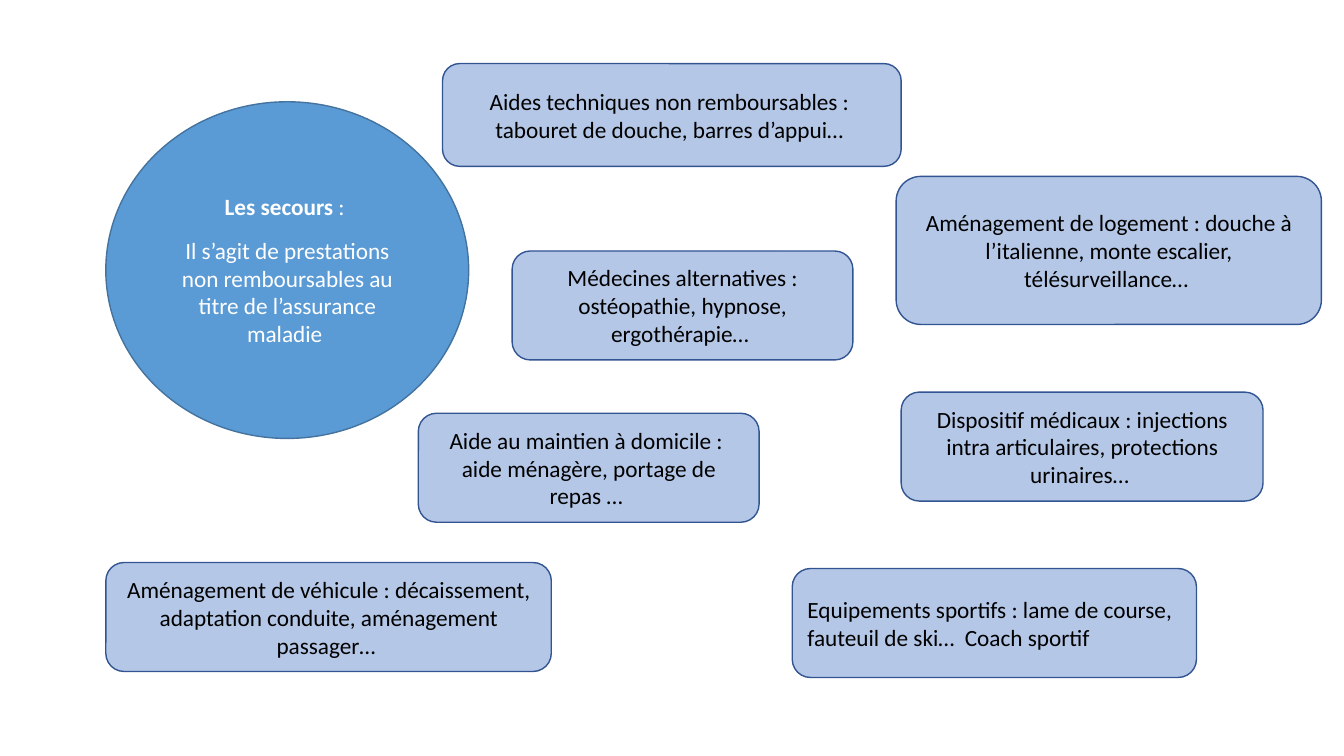
from pptx import Presentation
from pptx.dml.color import RGBColor
from pptx.enum.shapes import MSO_SHAPE
from pptx.enum.text import MSO_ANCHOR, PP_ALIGN
from pptx.util import Pt

COLORS = {
    "circle": "5B9BD5",
    "circle_line": "43739E",
    "box": "B4C7E7",
    "box_line": "325491",
    "light": "FFFFFF",
    "dark": "000000",
}
FONT = {"name": "Calibri", "size": Pt(16.6)}
BOX_H = 77.8

# Centred boxes: left, top, width, height, paragraphs
AID_BOXES = [
    (316.1, 45.4, 327.6, 73.4, ["Aides techniques non remboursables : ",
                                "tabouret de douche, barres d’appui… "]),
    (640.1, 126, 303.8, 105.8, ["Aménagement de logement : douche à l’italienne, "
                                "monte escalier, télésurveillance… "]),
    (365.8, 179.3, 243.4, BOX_H, ["Médecines alternatives : ostéopathie, hypnose, "
                                  "ergothérapie… "]),
    (643.7, 280.1, 258.5, BOX_H, ["Dispositif médicaux : injections intra articulaires, "
                                  "protections urinaires… "]),
    (75.6, 401.8, 318.2, BOX_H, ["Aménagement de véhicule : décaissement, adaptation "
                                 "conduite, aménagement passager… "]),
    (298.8, 295.2, 243.4, BOX_H, ["Aide au maintien à domicile : ",
                                  "aide ménagère, portage de repas … "]),
]
SPORT_BOX = (565.9, 406.1, 288.7, BOX_H, ["Equipements sportifs : lame de course, "
                                          "fauteuil de ski…  Coach sportif"])


def rgb(key):
    return RGBColor.from_string(COLORS[key])


def add_panel(s, kind, rect, fill, line):
    """Add a filled, outlined shape and return its text frame."""
    sp = s.shapes.add_shape(kind, *map(Pt, rect))
    sp.shadow.inherit = False
    sp.fill.solid()
    sp.fill.fore_color.rgb = rgb(fill)
    sp.line.color.rgb = rgb(line)
    sp.line.width = Pt(1)
    tf = sp.text_frame
    tf.word_wrap = True
    tf.vertical_anchor = MSO_ANCHOR.MIDDLE
    return tf


def add_run(p, text, color, bold=False):
    r = p.add_run()
    r.text = text
    for attr, value in {**FONT, "bold": bold}.items():
        setattr(r.font, attr, value)
    r.font.color.rgb = rgb(color)


def add_paragraph(tf, index, align):
    p = tf.add_paragraph() if index else tf.paragraphs[0]
    p.alignment = align
    return p


def add_box(s, left, top, width, height, lines, align=PP_ALIGN.CENTER):
    tf = add_panel(s, MSO_SHAPE.ROUNDED_RECTANGLE, (left, top, width, height),
                   "box", "box_line")
    for i, text in enumerate(lines):
        add_run(add_paragraph(tf, i, align), text, "dark")


def add_circle(s):
    tf = add_panel(s, MSO_SHAPE.OVAL, (75.6, 72.7, 259.2, 240.5),
                   "circle", "circle_line")
    p = add_paragraph(tf, 0, PP_ALIGN.CENTER)
    p.space_after = Pt(11)
    add_run(p, "Les secours ", "light", bold=True)
    add_run(p, ": ", "light")
    p = add_paragraph(tf, 1, PP_ALIGN.CENTER)
    add_run(p, "Il s’agit de prestations non remboursables au titre de "
               "l’assurance maladie ", "light")


def main():
    prs = Presentation()
    prs.slide_width, prs.slide_height = Pt(960), Pt(540)
    s = prs.slides.add_slide(prs.slide_layouts[6])

    # Definition
    add_circle(s)

    # Kinds of aid
    for box in AID_BOXES:
        add_box(s, *box)
    add_box(s, *SPORT_BOX, align=PP_ALIGN.LEFT)

    prs.save("out.pptx")


if __name__ == "__main__":
    main()
